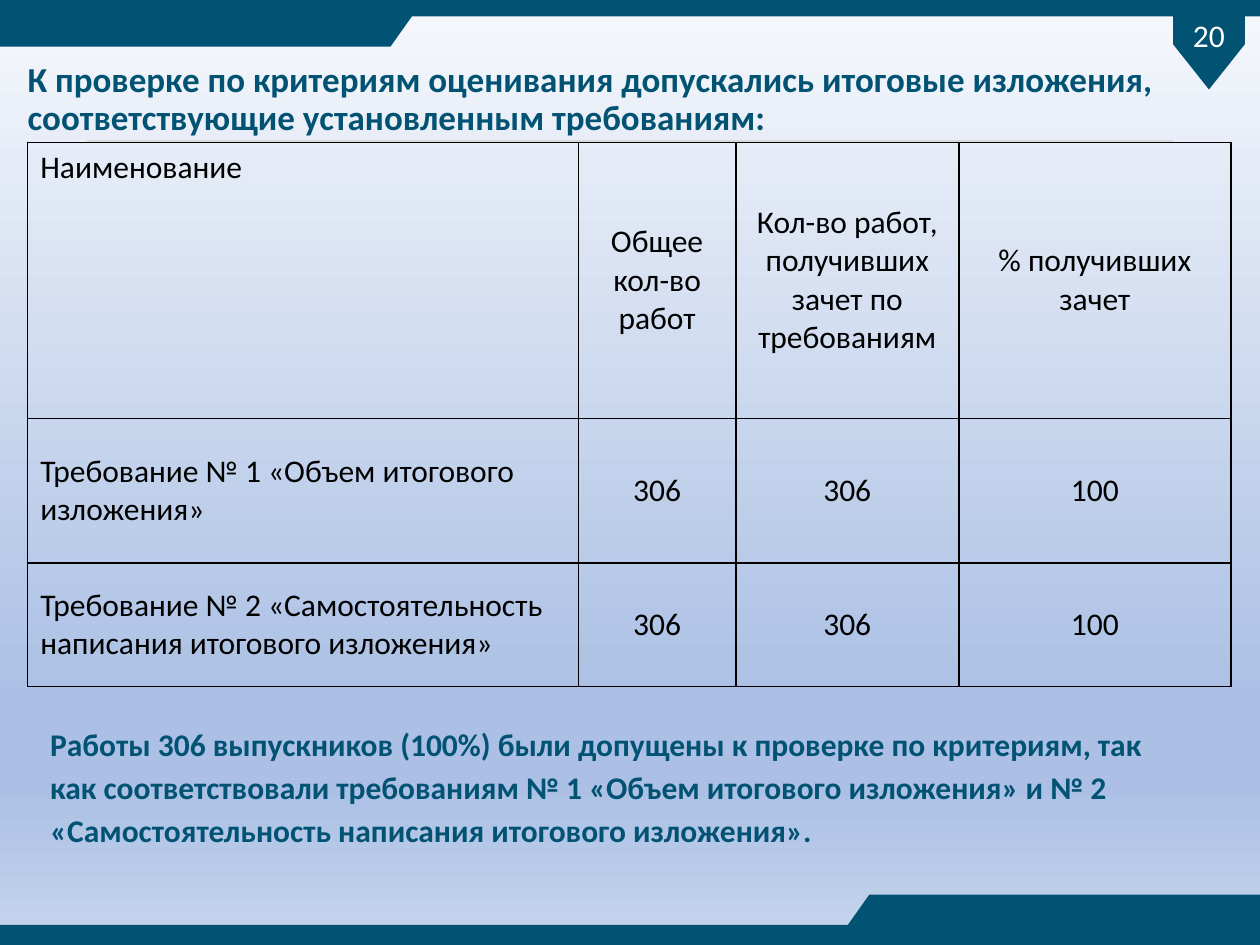
from copy import deepcopy
from dataclasses import dataclass

from lxml import etree
from pptx import Presentation
from pptx.dml.color import RGBColor
from pptx.enum.shapes import MSO_CONNECTOR, MSO_SHAPE
from pptx.enum.text import MSO_ANCHOR, PP_ALIGN
from pptx.oxml.ns import qn
from pptx.util import Inches, Pt

HOME_PLATE = MSO_SHAPE.PENTAGON
STRAIGHT = MSO_CONNECTOR.STRAIGHT
TOP, MIDDLE = MSO_ANCHOR.TOP, MSO_ANCHOR.MIDDLE
LEFT, CENTER = PP_ALIGN.LEFT, PP_ALIGN.CENTER

FONT = "Calibri"
TEAL, BLACK, WHITE, GREY = "025373", "000000", "FFFFFF", "D9D9D9"
GRADIENT = [(0, "F6F8FC"), (0.74, "ABC0E4"), (0.83, "ABC0E4"), (1, "C7D5ED")]

BOTTOM_BAND = [(6.9, 7.1), (10, 7.1), (10, 7.5), (0, 7.5), (0, 7.34), (6.73, 7.34)]
TOP_BAND = [(10 - x, 7.47 - y) for x, y in BOTTOM_BAND]

COLUMN_WIDTHS = [4.37, 1.25, 1.77, 2.16]
ROW_HEIGHTS = [2.19, 1.15, 0.98]
RESULTS = [
    ["Наименование", "Общее кол-во работ",
     "Кол-во работ, получивших зачет по требованиям", "% получивших зачет"],
    ["Требование № 1 «Объем итогового изложения»", "306", "306", "100"],
    ["Требование № 2 «Самостоятельность написания итогового изложения»",
     "306", "306", "100"],
]


@dataclass
class Statement:
    text: str
    left: float
    top: float
    width: float
    height: float
    size: float
    line_spacing: float
    anchor: MSO_ANCHOR


STATEMENTS = [
    Statement("К проверке по критериям оценивания допускались итоговые изложения, "
              "соответствующие установленным требованиям:",
              0.12, 0.41, 9.41, 0.77, 20, 0.9, MIDDLE),
    Statement("Работы 306 выпускников (100%) были допущены к проверке по критериям, "
              "так как соответствовали требованиям № 1 «Объем итогового изложения» "
              "и № 2 «Самостоятельность написания итогового изложения».",
              0.3, 5.66, 9.01, 1.14, 18, 1.14, TOP),
]


def color(value: str) -> RGBColor:
    return RGBColor.from_string(value)


def write(frame, text: str, size: float, ink: str, bold: bool = False, align=LEFT) -> None:
    frame.text = text
    paragraph = frame.paragraphs[0]
    paragraph.alignment = align
    font = paragraph.runs[0].font
    font.name, font.size, font.bold = FONT, Pt(size), bold
    font.color.rgb = color(ink)


def paint(shape, fill: str) -> None:
    shape.shadow.inherit = False
    shape.fill.solid()
    shape.fill.fore_color.rgb = color(fill)
    shape.line.fill.background()


def draw_background(slide) -> None:
    fill = slide.background.fill
    fill.gradient()
    fill.gradient_angle = 270
    stop_list = slide.element.find(".//" + qn("a:gsLst"))
    while len(stop_list) < len(GRADIENT):
        stop_list.append(deepcopy(stop_list[0]))
    for stop, (position, value) in zip(fill.gradient_stops, GRADIENT):
        stop.position = position
        stop.color.rgb = color(value)


def draw_band(slide, points: list[tuple[float, float]]) -> None:
    corners = [(Inches(x), Inches(y)) for x, y in points]
    builder = slide.shapes.build_freeform(*corners[0])
    builder.add_line_segments(corners[1:], close=True)
    paint(builder.convert_to_shape(), TEAL)


def draw_page_badge(slide, number: str) -> None:
    badge = slide.shapes.add_shape(
        HOME_PLATE, Inches(9.25), Inches(0.08), Inches(0.69), Inches(0.57))
    badge.rotation = 90
    badge.adjustments[0] = 0.63
    paint(badge, TEAL)
    frame = badge.text_frame
    frame.margin_left = frame.margin_right = Inches(0.01)
    frame.margin_top = frame.margin_bottom = Inches(0.01)
    frame.vertical_anchor = MIDDLE
    badge.element.find(".//" + qn("a:bodyPr")).set("vert", "vert270")
    write(frame, number, 18, WHITE, align=CENTER)


def draw_divider(slide) -> None:
    divider = slide.shapes.add_connector(
        STRAIGHT, Inches(0.69), Inches(1.12), Inches(9.31), Inches(1.12))
    divider.line.color.rgb = color(GREY)
    divider.line.width = Pt(0.75)
    etree.SubElement(divider.element.spPr, qn("a:effectLst"))


def draw_statement(slide, statement: Statement) -> None:
    box = slide.shapes.add_textbox(
        Inches(statement.left), Inches(statement.top),
        Inches(statement.width), Inches(statement.height))
    frame = box.text_frame
    frame.word_wrap = True
    frame.vertical_anchor = statement.anchor
    write(frame, statement.text, statement.size, TEAL, bold=True)
    frame.paragraphs[0].line_spacing = statement.line_spacing


def outline_cell(cell) -> None:
    cell.fill.background()
    properties = cell._tc.get_or_add_tcPr()
    for index, side in enumerate(("a:lnL", "a:lnR", "a:lnT", "a:lnB")):
        border = etree.Element(qn(side), w=str(Pt(1)))
        solid = etree.SubElement(border, qn("a:solidFill"))
        etree.SubElement(solid, qn("a:srgbClr"), val=BLACK)
        properties.insert(index, border)


def draw_results(slide) -> None:
    table = slide.shapes.add_table(
        len(ROW_HEIGHTS), len(COLUMN_WIDTHS), Inches(0.22), Inches(1.13),
        Inches(sum(COLUMN_WIDTHS)), Inches(sum(ROW_HEIGHTS))).table
    table.first_row = table.horz_banding = False
    for column, width in zip(table.columns, COLUMN_WIDTHS):
        column.width = Inches(width)
    for row, height in zip(table.rows, ROW_HEIGHTS):
        row.height = Inches(height)
    for r, entries in enumerate(RESULTS):
        for c, entry in enumerate(entries):
            cell = table.cell(r, c)
            cell.vertical_anchor = TOP if r == c == 0 else MIDDLE
            write(cell.text_frame, entry, 18, BLACK, align=CENTER if c else LEFT)
            outline_cell(cell)


def main() -> None:
    presentation = Presentation()
    presentation.slide_width, presentation.slide_height = Inches(10), Inches(7.5)
    slide = presentation.slides.add_slide(presentation.slide_layouts[6])
    title, conclusion = STATEMENTS
    draw_background(slide)
    draw_statement(slide, title)
    for band in (BOTTOM_BAND, TOP_BAND):
        draw_band(slide, band)
    draw_page_badge(slide, "20")
    draw_divider(slide)
    draw_results(slide)
    draw_statement(slide, conclusion)
    presentation.save("out.pptx")


if __name__ == "__main__":
    main()
